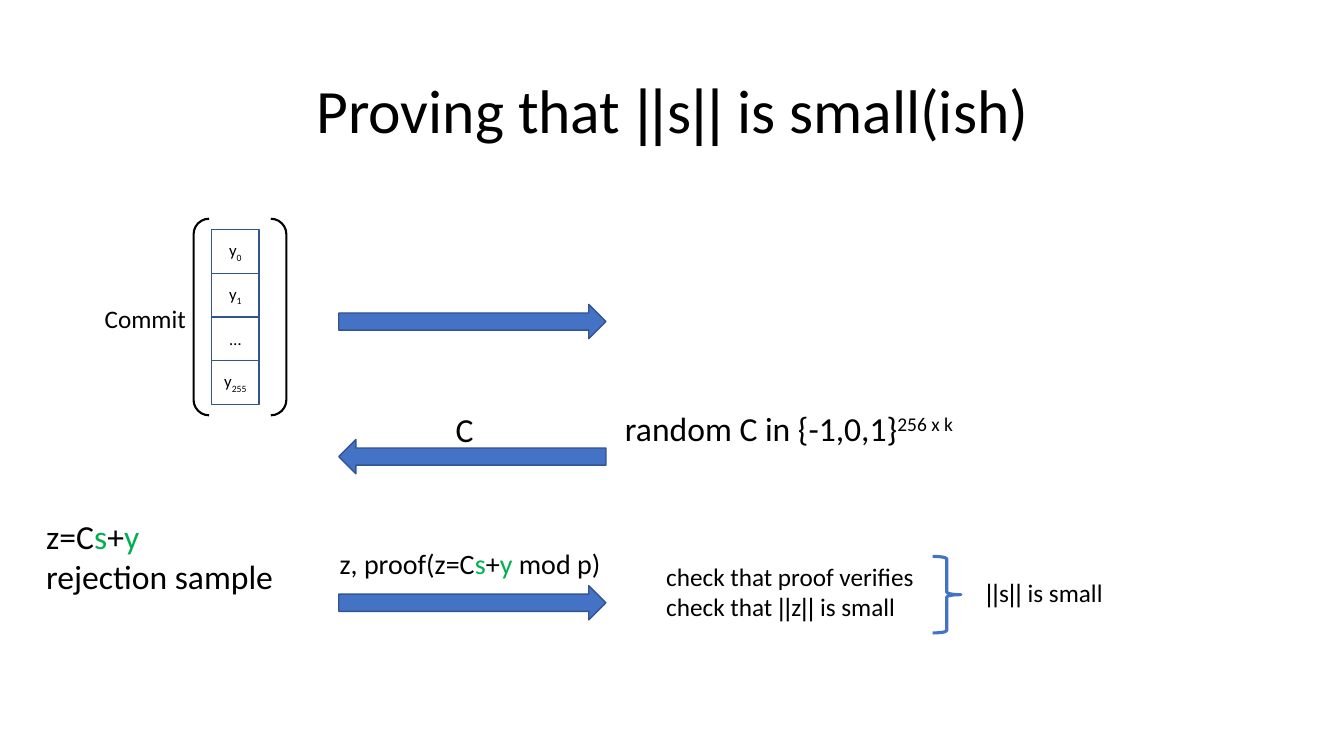
from dataclasses import dataclass

from pptx import Presentation
from pptx.dml.color import RGBColor as Rgb
from pptx.enum.shapes import MSO_SHAPE as Kind
from pptx.enum.text import MSO_ANCHOR as Anchor, MSO_AUTO_SIZE as Fit, PP_ALIGN as Align
from pptx.util import Inches, Pt


@dataclass(frozen=True)
class Theme:
    ink: str = "000000"
    paper: str = "FFFFFF"
    blue: str = "4472C4"
    edge: str = "325491"
    green: str = "00B050"
    font: str = "Calibri"
    bars: str = "Arial"
    title: int = 44
    large: int = 24
    medium: int = 20
    small: int = 18
    cell: int = 12


THEME = Theme()
SHIFT = {"sub": "-25000", "sup": "30000"}
NORM = [("||", "bar"), "s", ("||", "bar")]


def put(item, values):
    for name, value in values.items():
        setattr(item, name, value)


def add_run(para, part, size):
    text, role = (part, "") if isinstance(part, str) else part
    run = para.add_run()
    run.text = text
    put(run.font, {
        "size": Pt(size),
        "name": THEME.bars if role == "bar" else THEME.font,
    })
    run.font.color.rgb = Rgb.from_string(THEME.green if role == "key" else THEME.ink)
    if role in SHIFT:
        run.font._element.set("baseline", SHIFT[role])


def write(shape, lines, size, para_fmt=None, **frame_fmt):
    frame = shape.text_frame
    put(frame, {"word_wrap": True, "auto_size": Fit.NONE, **frame_fmt})
    for index, parts in enumerate(lines):
        para = frame.add_paragraph() if index else frame.paragraphs[0]
        put(para, para_fmt or {"alignment": Align.LEFT})
        for part in parts:
            add_run(para, part, size)


def add_label(slide, box, size, *lines):
    write(slide.shapes.add_textbox(*map(Inches, box)), lines, size)


def add_form(slide, kind, box, line, width, fill=None):
    form = slide.shapes.add_shape(kind, *map(Inches, box))
    form.shadow.inherit = False
    if fill:
        form.fill.solid()
        form.fill.fore_color.rgb = Rgb.from_string(fill)
    else:
        form.fill.background()
    form.line.color.rgb = Rgb.from_string(line)
    form.line.width = Pt(width)
    return form


def add_title(slide):
    title = slide.shapes.title
    put(title, {
        "left": Inches(0.92), "top": Inches(0.4),
        "width": Inches(11.5), "height": Inches(1.45),
    })
    write(title, [["Proving that ", *NORM, " is small(ish)"]], THEME.title,
          {"alignment": Align.CENTER, "line_spacing": 0.9},
          vertical_anchor=Anchor.MIDDLE)


def add_vector(slide):
    step = 0.433
    cells = [["y", ("0", "sub")], ["y", ("1", "sub")], ["…"], ["y", ("255", "sub")]]
    for row, parts in enumerate(cells):
        box = (2.1, 2.28 + row * step, 0.47, step)
        cell = add_form(slide, Kind.RECTANGLE, box, THEME.edge, 1, THEME.paper)
        write(cell, [parts], THEME.cell, {"alignment": Align.CENTER},
              vertical_anchor=Anchor.MIDDLE, word_wrap=False)
    add_form(slide, Kind.DOUBLE_BRACKET, (1.92, 2.17, 0.92, 1.95), THEME.ink, 1.5)


def add_arrows(slide):
    arrows = [(Kind.RIGHT_ARROW, 3.02), (Kind.LEFT_ARROW, 4.36), (Kind.RIGHT_ARROW, 5.81)]
    for kind, top in arrows:
        add_form(slide, kind, (3.36, top, 2.65, 0.34), THEME.edge, 1, THEME.blue)


def add_labels(slide):
    add_label(slide, (0.94, 2.96, 1.06, 0.4), THEME.small, ["Commit"])
    add_label(slide, (6.1, 4, 4.61, 0.5), THEME.large,
              ["random C in {-1,0,1}", ("256 x k", "sup")])
    add_label(slide, (4.42, 4.01, 0.42, 0.5), THEME.large, ["C"])
    add_label(slide, (0.36, 5.07, 2.65, 0.91), THEME.large,
              ["z=C", ("s", "key"), "+", ("y", "key")], ["rejection sample"])
    add_label(slide, (3.27, 5.37, 4.11, 0.44), THEME.medium,
              ["z, proof(z=C", ("s", "key"), "+", ("y ", "key"), "mod p)"])
    add_label(slide, (6.51, 5.52, 2.74, 0.71), THEME.small,
              ["check that proof verifies"],
              ["check that ", ("||", "bar"), "z", ("||", "bar"), " is small"])
    add_label(slide, (9.68, 5.68, 1.71, 0.41), THEME.small, [*NORM, " is small"])


def main():
    deck = Presentation()
    put(deck, {"slide_width": Inches(13.33), "slide_height": Inches(7.5)})
    slide = deck.slides.add_slide(deck.slide_layouts[5])
    add_title(slide)
    add_vector(slide)
    add_arrows(slide)
    add_labels(slide)
    add_form(slide, Kind.RIGHT_BRACE, (9.25, 5.52, 0.28, 0.76), THEME.blue, 2.25)
    deck.save("out.pptx")


if __name__ == "__main__":
    main()
